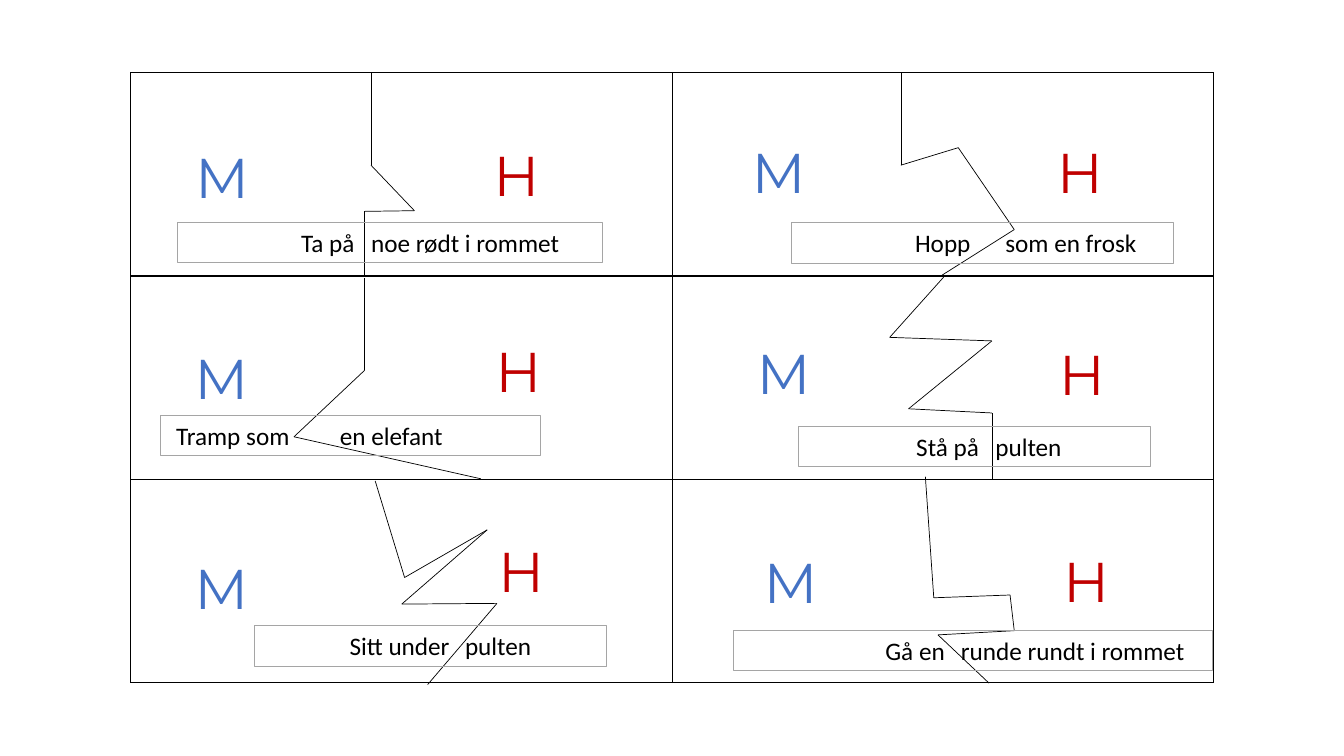
"""Build a slide with six cracked task cards, each split into an M half and an H half."""
from itertools import pairwise

from lxml.etree import SubElement
from pptx import Presentation
from pptx.dml.color import RGBColor
from pptx.enum.shapes import MSO_CONNECTOR, MSO_SHAPE
from pptx.enum.text import MSO_ANCHOR, MSO_AUTO_SIZE, PP_ALIGN
from pptx.oxml.ns import qn
from pptx.util import Pt

COLORS = {"black": "000000", "grey": "A5A5A5", "blue": "4472C4", "red": "C00000"}

CARDS = [
    {"words": ("Ta på", "noe rødt i rommet"), "box": (126.5, 158.5, 304),
     "indent": 88.6, "tab": 50, "M": (132.5, 98.5), "H": (345.5, 96.5),
     "crack": [(265, 52), (265, 118), (296, 150.5), (260.5, 151), (260.5, 197.5)]},
    {"words": ("Hopp", "som en frosk"), "box": (565, 159, 273),
     "indent": 88.6, "tab": 64.5, "M": (530, 94.5), "H": (748, 95),
     "crack": [(643.5, 52), (643.5, 118), (684.5, 105.5), (724.5, 164), (673, 196.5)]},
    {"words": ("Tramp som", "en elefant"), "box": (114.5, 296.5, 271.5),
     "indent": 11.3, "tab": 117, "M": (132, 242), "H": (347, 237),
     "crack": [(260.5, 198.5), (260.5, 264.5), (210, 312), (343.5, 342)]},
    {"words": ("Stå på", "pulten"), "box": (570, 304.5, 252),
     "indent": 84.5, "tab": 56.5, "M": (533.5, 238.5), "H": (749.5, 239),
     "crack": [(674, 198), (635.5, 241), (708.5, 243.5), (649, 292),
               (708.5, 295), (708.5, 342.5)]},
    {"words": ("Sitt under", "pulten"), "box": (181.5, 447, 252),
     "indent": 68.2, "tab": 82.5, "M": (132, 391.5), "H": (349, 379.5),
     "crack": [(268, 343.5), (289, 412.5), (348, 378.5), (287, 431.5),
               (355, 431), (305.5, 489)]},
    {"words": ("Gå en", "runde rundt i rommet"), "box": (523.5, 450, 342.5),
     "indent": 108.9, "tab": 54, "M": (538.5, 387.5), "H": (752.5, 386.5),
     "crack": [(661, 340.5), (667, 427), (721.5, 425), (724.5, 450.5),
               (670, 453.5), (706.5, 488)]},
]
LETTERS = {"M": (86.4, "blue"), "H": (64, "red")}
ROWS, COLUMNS = 3, 2
GRID = (93.5, 52, 773.5, 435.5)


def color(name):
    return RGBColor.from_string(COLORS[name])


def add_run(paragraph, text, size, font, color_name):
    run = paragraph.add_run()
    run.text = text
    run.font.size = Pt(size)
    run.font.name = font
    run.font.color.rgb = color(color_name)


def add_grid(slide):
    table = slide.shapes.add_table(ROWS, COLUMNS, *map(Pt, GRID)).table
    table.first_row = table.horz_banding = False
    for row in table.rows:
        row.height = Pt(GRID[3] / ROWS)
    for column in table.columns:
        column.width = Pt(GRID[2] / COLUMNS)
    for cell in table.iter_cells():
        properties = cell._tc.get_or_add_tcPr()
        for side in ("a:lnL", "a:lnR", "a:lnT", "a:lnB"):
            border = SubElement(properties, qn(side), w=str(Pt(1)))
            fill = SubElement(border, qn("a:solidFill"))
            SubElement(fill, qn("a:srgbClr"), val=COLORS["black"])
        cell.fill.background()


def add_crack(slide, points):
    for start, end in pairwise(points):
        line = slide.shapes.add_connector(
            MSO_CONNECTOR.STRAIGHT, *map(Pt, start + end))
        line.line.color.rgb = color("black")
        line.line.width = Pt(0.5)
        SubElement(line._element.spPr, qn("a:effectLst"))


def add_letter(slide, letter, position):
    width, color_name = LETTERS[letter]
    shape = slide.shapes.add_textbox(*map(Pt, (*position, width, 55.7)))
    frame = shape.text_frame
    frame.word_wrap = True
    frame.auto_size = MSO_AUTO_SIZE.SHAPE_TO_FIT_TEXT
    add_run(frame.paragraphs[0], letter, 40, "Montserrat", color_name)


def add_caption(slide, card):
    left, top, width = card["box"]
    shape = slide.shapes.add_shape(
        MSO_SHAPE.RECTANGLE, Pt(left), Pt(top), Pt(width), Pt(29))
    shape.shadow.inherit = False
    shape.fill.background()
    shape.line.color.rgb = color("grey")
    shape.line.width = Pt(0.5)
    frame = shape.text_frame
    frame.word_wrap = True
    frame.auto_size = MSO_AUTO_SIZE.SHAPE_TO_FIT_TEXT
    frame.vertical_anchor = MSO_ANCHOR.TOP
    frame.margin_left = Pt(card["indent"])
    paragraph = frame.paragraphs[0]
    paragraph.alignment = PP_ALIGN.LEFT
    tabs = SubElement(paragraph._p.get_or_add_pPr(), qn("a:tabLst"))
    SubElement(tabs, qn("a:tab"), pos=str(Pt(card["tab"])), algn="l")
    add_run(paragraph, "\t".join(card["words"]), 18, "Calibri", "black")


def main():
    presentation = Presentation()
    presentation.slide_width, presentation.slide_height = Pt(960), Pt(540)
    slide = presentation.slides.add_slide(presentation.slide_layouts[6])
    add_grid(slide)
    for card in CARDS:
        add_crack(slide, card["crack"])
        for letter in LETTERS:
            add_letter(slide, letter, card[letter])
        add_caption(slide, card)
    presentation.save("out.pptx")


if __name__ == "__main__":
    main()
